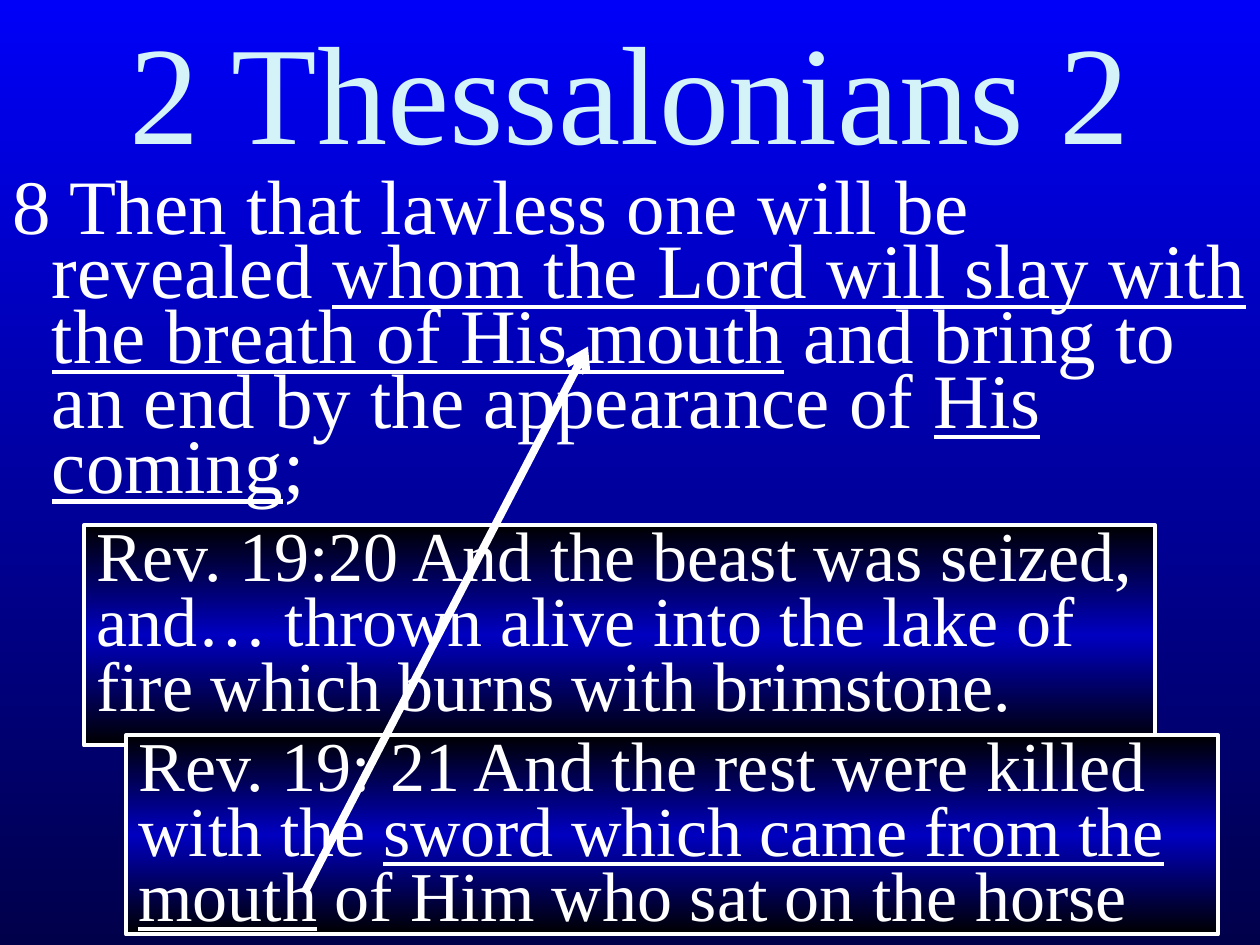
from pptx import Presentation
from pptx.dml.color import RGBColor
from pptx.enum.shapes import MSO_CONNECTOR, MSO_SHAPE
from pptx.enum.text import MSO_ANCHOR, MSO_AUTO_SIZE, PP_ALIGN
from pptx.oxml.ns import qn
from pptx.util import Pt
from lxml import etree

RECTANGLE = MSO_SHAPE.RECTANGLE
STRAIGHT = MSO_CONNECTOR.STRAIGHT
TOP, MIDDLE = MSO_ANCHOR.TOP, MSO_ANCHOR.MIDDLE
NO_AUTOFIT = MSO_AUTO_SIZE.NONE
LEFT, CENTER = PP_ALIGN.LEFT, PP_ALIGN.CENTER

FONT = "Times New Roman"
COLORS = {
    "text": "FFFFFF",
    "title": "D3F3F9",
    "sky": "0000F8",
    "night": "00004A",
    "box edge": "000000",
    "box middle": "0000C0",
}


def color(name):
    return RGBColor.from_string(COLORS[name])


class VerseSlide:
    def __init__(self, presentation):
        self.slide = presentation.slides.add_slide(presentation.slide_layouts[1])
        self.shapes = self.slide.shapes

    def gradient(self, fill, owner, names):
        """Fill from top to bottom with evenly spaced colours."""
        fill.gradient()
        fill.gradient_angle = 270
        stops = owner.find(".//" + qn("a:gsLst"))
        for stop in list(stops):
            stops.remove(stop)
        for index, name in enumerate(names):
            position = str(100000 * index // (len(names) - 1))
            stop = etree.SubElement(stops, qn("a:gs"), pos=position)
            etree.SubElement(stop, qn("a:srgbClr"), val=COLORS[name])

    def background(self, names):
        self.gradient(self.slide.background.fill, self.slide._element, names)

    def set_text(self, shape, runs, size, spacing, before=0, name="text",
                 align=LEFT, anchor=TOP):
        """Fill one paragraph from pairs of text and underline."""
        frame = shape.text_frame
        frame.word_wrap = True
        frame.auto_size = NO_AUTOFIT
        frame.vertical_anchor = anchor
        frame.margin_left = frame.margin_right = Pt(7.2)
        frame.margin_top = frame.margin_bottom = Pt(3.6)
        paragraph = frame.paragraphs[0]
        paragraph.alignment = align
        paragraph.line_spacing = Pt(spacing)
        paragraph.space_before = Pt(before)
        for text, underline in runs:
            run = paragraph.add_run()
            run.text = text
            run.font.name = FONT
            run.font.size = Pt(size)
            run.font.color.rgb = color(name)
            run.font.underline = underline
        return paragraph

    def place(self, shape, left, top, width, height):
        shape.left, shape.top = Pt(left), Pt(top)
        shape.width, shape.height = Pt(width), Pt(height)

    def title(self, text, bounds):
        shape = self.shapes.title
        self.place(shape, *bounds)
        self.set_text(shape, [(text, False)], 80, 77, name="title",
                      align=CENTER, anchor=MIDDLE)

    def body(self, runs, bounds):
        shape = self.slide.placeholders[1]
        self.place(shape, *bounds)
        paragraph = self.set_text(shape, runs, 44, 37, before=2.2)
        properties = paragraph._p.get_or_add_pPr()
        properties.set("marL", str(Pt(22.5)))
        properties.set("indent", str(-Pt(22.5)))
        etree.SubElement(properties, qn("a:buNone"))

    def box(self, runs, bounds):
        shape = self.shapes.add_shape(RECTANGLE, *map(Pt, bounds))
        shape.shadow.inherit = False
        self.gradient(shape.fill, shape._element,
                      ["box edge", "box middle", "box edge"])
        shape.line.color.rgb = color("text")
        shape.line.width = Pt(2.25)
        self.set_text(shape, runs, 40, 37, before=1)
        return shape

    def send_to_back(self, shape):
        self.shapes._spTree.insert(2, shape._element)

    def arrow(self, start, end):
        connector = self.shapes.add_connector(STRAIGHT, *map(Pt, start + end))
        connector.line.color.rgb = color("text")
        connector.line.width = Pt(4.5)
        properties = connector._element.spPr
        etree.SubElement(properties.find(qn("a:ln")), qn("a:tailEnd"),
                         type="arrow")
        etree.SubElement(properties, qn("a:effectLst"))


def main():
    presentation = Presentation()
    presentation.slide_width, presentation.slide_height = Pt(720), Pt(540)
    verse = VerseSlide(presentation)
    verse.background(["sky", "night"])
    verse.title("2 Thessalonians 2", (0, 0, 720, 120))
    verse.body([
        ("8 Then that lawless one will be revealed ", False),
        ("whom the Lord will slay with the breath of His mouth", True),
        (" and bring to an end by the appearance of ", False),
        ("His coming", True),
        (";", False),
    ], (0, 102, 720, 384))
    beast_box = verse.box([
        ("Rev. 19:20 And the beast was seized, and… thrown alive into the "
         "lake of fire which burns with brimstone.", False),
    ], (48, 300, 612, 126))
    verse.send_to_back(beast_box)
    verse.box([
        ("Rev. 19: \t21 And the rest were killed with the ", False),
        ("sword which came from the mouth", True),
        (" of Him who sat on the horse", False),
    ], (72, 420, 624, 114))
    verse.arrow((174, 510), (336, 198))
    presentation.save("out.pptx")


if __name__ == "__main__":
    main()
